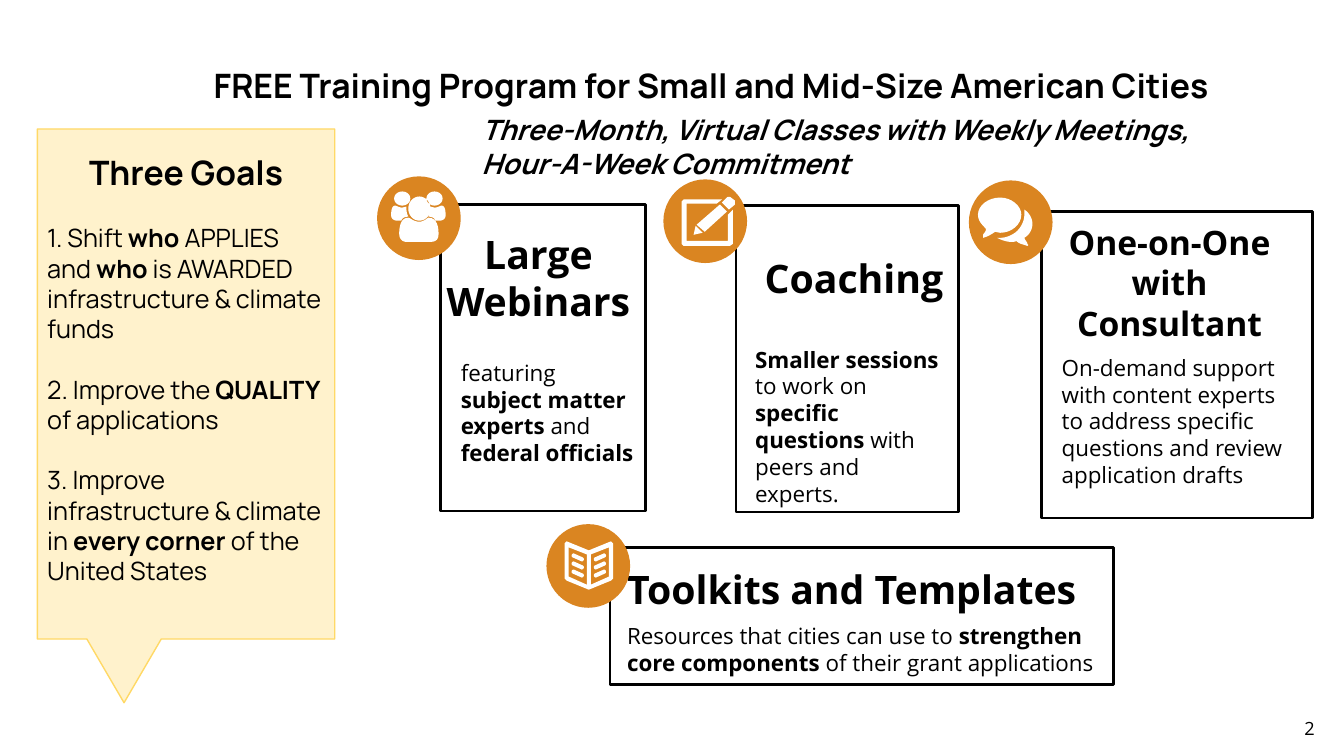
from dataclasses import dataclass
from math import cos, pi, sin

from pptx import Presentation
from pptx.dml.color import RGBColor
from pptx.enum.shapes import MSO_SHAPE
from pptx.enum.text import MSO_ANCHOR, PP_ALIGN
from pptx.util import Inches, Pt

RECTANGLE, OVAL = MSO_SHAPE.RECTANGLE, MSO_SHAPE.OVAL
CALLOUT = MSO_SHAPE.RECTANGULAR_CALLOUT
TOP, MIDDLE = MSO_ANCHOR.TOP, MSO_ANCHOR.MIDDLE
LEFT, CENTER, RIGHT = PP_ALIGN.LEFT, PP_ALIGN.CENTER, PP_ALIGN.RIGHT

BLACK = RGBColor(0x00, 0x00, 0x00)
WHITE = RGBColor(0xFF, 0xFF, 0xFF)
ORANGE = RGBColor(0xDA, 0x85, 0x21)
CREAM = RGBColor(0xFF, 0xF2, 0xCC)
GOLD = RGBColor(0xFF, 0xD9, 0x66)
MANROPE, OPEN_SANS = "Manrope", "Open Sans"

Bounds = tuple[float, float, float, float]
Outline = list[tuple[float, float]]


@dataclass
class Line:
    """A paragraph, with bold words between double asterisks."""
    text: str
    size: float
    font: str = OPEN_SANS
    align: PP_ALIGN = LEFT
    before: float = 0
    spacing: float = 1
    italic: bool = False


@dataclass
class Copy:
    """A text box: left, top, width, height, then left, top, right, bottom insets."""
    bounds: Bounds
    insets: Bounds
    lines: list[Line]
    anchor: MSO_ANCHOR = TOP


@dataclass
class Badge:
    """A round badge with the outlines of its icon."""
    left: float
    top: float
    icon: list[Outline]


def curve(start: tuple[float, float], *steps: tuple[float, ...]) -> Outline:
    """Flatten lines (x, y) and cubic curves (x1, y1, x2, y2, x, y) into points."""
    points = [start]
    for step in steps:
        if len(step) == 2:
            points.append(step)
            continue
        knots = [points[-1], step[:2], step[2:4], step[4:]]
        for part in range(1, 9):
            t = part / 8
            weights = ((1 - t) ** 3, 3 * t * (1 - t) ** 2, 3 * t * t * (1 - t), t ** 3)
            points.append(tuple(sum(w * knot[axis] for w, knot in zip(weights, knots))
                                for axis in (0, 1)))
    return points


def oval(x: float, y: float, radius_x: float, radius_y: float) -> Outline:
    """Return points around an ellipse."""
    return [(x + radius_x * cos(pi * i / 18), y + radius_y * sin(pi * i / 18))
            for i in range(36)]


def mirrored(outlines: list[Outline], axis: float) -> list[Outline]:
    """Return the outlines followed by their reflections in a vertical axis."""
    return outlines + [[(2 * axis - x, y) for x, y in outline] for outline in outlines]


BOOK = [[(5.6, 5.39), (5.62, 5.37), (5.84, 5.46), (6.06, 5.37), (6.08, 5.39),
         (6.08, 5.74), (6.06, 5.76), (5.84, 5.85), (5.62, 5.76), (5.6, 5.74)]]
BOOK += mirrored(
    [[(5.82, 5.5), (5.64, 5.43), (5.64, 5.72), (5.82, 5.8)]]
    + [curve((5.69, 5.49 + drop), (5.78, 5.53 + drop),
             (5.8, 5.54 + drop, 5.79, 5.57 + drop, 5.77, 5.57 + drop),
             (5.68, 5.53 + drop),
             (5.66, 5.52 + drop, 5.67, 5.49 + drop, 5.69, 5.49 + drop))
       for drop in (0, 0.08, 0.16)], 5.84)

PEOPLE = [
    oval(4.16, 2.07, 0.11, 0.12),
    curve((4.27, 2.4), (4.03, 2.4), (3.99, 2.4, 3.96, 2.37, 3.96, 2.32),
          (3.96, 2.26, 3.97, 2.16, 4.05, 2.16), (4.07, 2.16, 4.1, 2.2, 4.16, 2.2),
          (4.21, 2.2, 4.24, 2.16, 4.25, 2.16), (4.34, 2.16, 4.35, 2.26, 4.35, 2.32),
          (4.35, 2.37, 4.33, 2.4, 4.27, 2.4))]
PEOPLE += mirrored([
    oval(3.99, 1.97, 0.08, 0.07),
    curve((3.98, 2.19), (3.94, 2.19), (3.91, 2.19, 3.88, 2.17, 3.88, 2.14),
          (3.88, 2.11, 3.88, 2.04, 3.92, 2.04), (3.93, 2.04, 3.96, 2.06, 3.99, 2.06),
          (4.03, 2.05), (4.03, 2.1, 4.04, 2.13, 4.05, 2.15),
          (4.02, 2.15, 3.99, 2.16, 3.98, 2.19))], 4.15)

PENCIL = [
    curve((7.29, 2.03), (7.23, 2.08), (7.16, 2.01), (7.21, 1.96),
          (7.22, 1.95, 7.24, 1.95, 7.25, 1.96), (7.29, 1.99)),
    [(6.9, 2.24), (6.97, 2.31), (6.88, 2.33)],
    [(7.21, 2.1), (6.99, 2.3), (6.91, 2.23), (7.14, 2.03)],
    [(6.81, 2.02), (6.81, 2.39), (7.22, 2.39), (7.22, 2.13), (7.27, 2.08), (7.27, 2.42),
     (7.24, 2.44), (6.78, 2.44), (6.76, 2.42), (6.76, 2), (6.78, 1.98), (7.16, 1.98),
     (7.11, 2.02)]]

SPEECH = [
    curve((9.92, 2.31), (9.87, 2.3), (9.84, 2.32, 9.81, 2.34, 9.78, 2.35), (9.75, 2.36),
          (9.75, 2.33), (9.76, 2.31, 9.78, 2.3, 9.78, 2.27),
          (9.74, 2.23, 9.7, 2.19, 9.7, 2.13), (9.7, 2.04, 9.8, 1.96, 9.92, 1.96),
          (10.03, 1.96, 10.13, 2.04, 10.13, 2.13),
          (10.13, 2.23, 10.03, 2.31, 9.92, 2.31)),
    curve((10.16, 2.36), (10.17, 2.39, 10.19, 2.4, 10.19, 2.42), (10.2, 2.43),
          (10.19, 2.44), (10.16, 2.43), (10.13, 2.42, 10.11, 2.42, 10.08, 2.39),
          (10.07, 2.4, 10.05, 2.4, 10.03, 2.4), (9.98, 2.4, 9.93, 2.38, 9.89, 2.36),
          (9.92, 2.36), (9.98, 2.36, 10.05, 2.33, 10.09, 2.29),
          (10.13, 2.25, 10.16, 2.19, 10.16, 2.13), (10.16, 2.08),
          (10.21, 2.11, 10.24, 2.17, 10.24, 2.22),
          (10.24, 2.28, 10.21, 2.33, 10.16, 2.36))]

CARDS = [(4.37, 2.03, 2.03, 3.04), (10.33, 2.1, 2.69, 3.04),
         (7.3, 2.04, 2.21, 3.04), (6.05, 5.43, 4.99, 1.36)]
BADGES = [Badge(5.42, 5.2, BOOK), Badge(3.74, 1.75, PEOPLE),
          Badge(6.58, 1.78, PENCIL), Badge(9.61, 1.79, SPEECH)]

HEADING_INSETS = (0.07, 0.24, 0.07, 0.07)
BODY_INSETS = (0.13, 0.13, 0.13, 0.13)
PLAIN_INSETS = (0.1, 0.05, 0.1, 0.05)
HEADINGS = [
    Copy((1.85, 0.64, 11.7, 0.92), (0.27, 0, 0.27, 0), [
        Line("**FREE Training Program for Small and Mid-Size American Cities**", 24, MANROPE)]),
    Copy((4.32, 2.04, 2.04, 1.58), HEADING_INSETS,
         [Line("**Large Webinars**", 28, align=CENTER)]),
    Copy((10.45, 1.96, 2.3, 2.09), HEADING_INSETS,
         [Line("**One-on-One with Consultant**", 24, align=CENTER)]),
    Copy((7.5, 2.28, 1.94, 0.77), HEADING_INSETS,
         [Line("**Coaching**", 28, align=CENTER)]),
    Copy((6.15, 5.44, 4.8, 1.31), (0.07, 0.17, 0.07, 0.07), [
        Line("**Toolkits and Templates**", 28),
        Line("Resources that cities can use to **strengthen core components** "
             "of their grant applications", 16, before=7)])]
DETAILS = [
    Copy((12.8, 7, 0.37, 0.48), BODY_INSETS, [Line("2", 13, align=RIGHT, spacing=0.9)], MIDDLE),
    Copy((4.44, 3.43, 2.02, 1.35), BODY_INSETS, [
        Line("featuring **subject matter experts **and **federal officials**", 16)]),
    Copy((7.36, 3.3, 2.12, 1.88), BODY_INSETS, [
        Line("**Smaller sessions **to work on **specific questions **with peers and experts.", 16)]),
    Copy((10.4, 3.38, 2.55, 1.62), BODY_INSETS, [
        Line("On-demand support with content experts to address specific questions "
             "and review application drafts", 16)]),
    Copy((4.68, 1.07, 8.17, 0.77), PLAIN_INSETS, [
        Line("**Three-Month, Virtual Classes with Weekly Meetings,**", 20, MANROPE, italic=True),
        Line("**Hour-A-Week Commitment**", 20, MANROPE, italic=True)])]
GOALS = Copy((0.37, 1.28, 2.95, 5.06), (0.1, 0.05, 0.1, 0.35), [
    Line("**Three Goals**", 24, MANROPE, CENTER)] + [
    Line(goal, 18, MANROPE, before=21.6) for goal in (
        "1. Shift **who **APPLIES and **who **is AWARDED infrastructure & climate funds",
        "2. Improve the **QUALITY** of applications",
        "3. Improve infrastructure & climate in **every corner **of the United States")], MIDDLE)


def write(box, copy: Copy) -> None:
    """Fill a shape or text box with its paragraphs."""
    frame = box.text_frame
    left, top, right, bottom = map(Inches, copy.insets)
    layout = {"word_wrap": True, "vertical_anchor": copy.anchor, "margin_left": left,
              "margin_top": top, "margin_right": right, "margin_bottom": bottom}
    for name, value in layout.items():
        setattr(frame, name, value)
    for index, line in enumerate(copy.lines):
        para = frame.add_paragraph() if index else frame.paragraphs[0]
        para.alignment, para.line_spacing = line.align, line.spacing
        if line.before:
            para.space_before = Pt(line.before)
        for order, words in enumerate(line.text.split("**")):
            if not words:
                continue
            span = para.add_run()
            span.text = words
            looks = {"name": line.font, "size": Pt(line.size),
                     "bold": order % 2 == 1, "italic": line.italic}
            for name, value in looks.items():
                setattr(span.font, name, value)
            span.font.color.rgb = BLACK


def paint(shape, fill: RGBColor | None, edge: RGBColor | None = None, width: float = 1) -> None:
    """Set the fill and line of a shape and remove its shadow."""
    shape.shadow.inherit = False
    for part, color in ((shape.fill, fill), (shape.line.fill, edge)):
        if color is None:
            part.background()
        else:
            part.solid()
            part.fore_color.rgb = color
    if edge is not None:
        shape.line.width = Pt(width)


def draw_badge(page, badge: Badge) -> None:
    """Draw an orange circle with a white icon."""
    circle = page.shapes.add_shape(OVAL, *map(Inches, (badge.left, badge.top, 0.83, 0.83)))
    paint(circle, ORANGE)
    outlines = [[(Inches(x), Inches(y)) for x, y in outline] for outline in badge.icon]
    builder = page.shapes.build_freeform(*outlines[0][0])
    for index, outline in enumerate(outlines):
        if index:
            builder.move_to(*outline[0])
        builder.add_line_segments(outline[1:], close=True)
    paint(builder.convert_to_shape(), WHITE)


def main() -> None:
    """Build the training program slide."""
    deck = Presentation()
    deck.slide_width, deck.slide_height = Inches(13.33), Inches(7.5)
    page = deck.slides.add_slide(deck.slide_layouts[6])
    for bounds in CARDS:
        paint(page.shapes.add_shape(RECTANGLE, *map(Inches, bounds)), None, BLACK, 2)
    for copy in HEADINGS:
        write(page.shapes.add_textbox(*map(Inches, copy.bounds)), copy)
    for badge in BADGES:
        draw_badge(page, badge)
    for copy in DETAILS:
        write(page.shapes.add_textbox(*map(Inches, copy.bounds)), copy)
    callout = page.shapes.add_shape(CALLOUT, *map(Inches, GOALS.bounds))
    paint(callout, CREAM, GOLD)
    write(callout, GOALS)
    deck.save("out.pptx")


if __name__ == "__main__":
    main()
